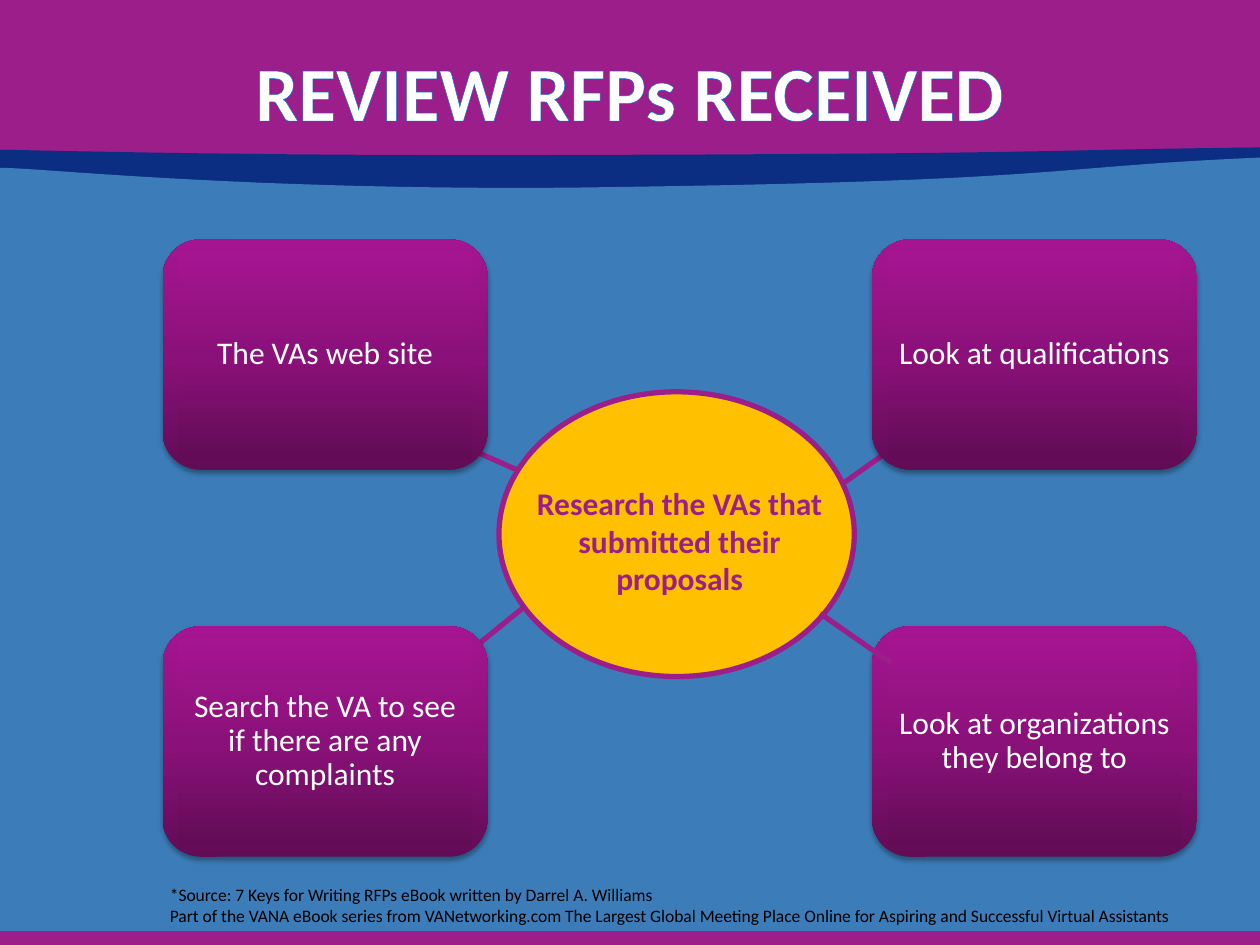
import pptx
import pptx.util
import pptx.dml.color
import pptx.enum.shapes
import pptx.enum.text
import pptx.oxml
import pptx.oxml.ns
from lxml import etree

Inches = pptx.util.Inches
Pt = pptx.util.Pt
Kind = pptx.enum.shapes.MSO_SHAPE
Align = pptx.enum.text.PP_ALIGN
Anchor = pptx.enum.text.MSO_ANCHOR
qn = pptx.oxml.ns.qn

HUES = {
    "plum": "9C1E8A", "navy": "0B2E82", "sky": "3C7DB9", "gold": "FFC000",
    "white": "FFFFFF", "black": "000000", "edge": "0070D5",
    "deep": "620C56", "mid": "8B117A", "light": "A51591",
}
FADE = [(0, "deep"), (50, "mid"), (100, "light")]
FACE = "Calibri"


def color(name):
    return pptx.dml.color.RGBColor.from_string(HUES[name])


def assign(item, values):
    for key, value in values.items():
        setattr(item, key, value)


def node(parent, tag, **attrs):
    return etree.SubElement(parent, qn(tag), {k: str(v) for k, v in attrs.items()})


def paint(shape, fill, line=None):
    shape.shadow.inherit = False
    shape.fill.solid()
    shape.fill.fore_color.rgb = color(fill)
    if line:
        shape.line.color.rgb = color(line)
        shape.line.width = Pt(3)
    else:
        shape.line.fill.background()


def add_form(shapes, kind, box, fill, line=None):
    shape = shapes.add_shape(kind, *map(Inches, box))
    paint(shape, fill, line)
    return shape


def curve(start, first, second, end, steps=24):
    for n in range(1, steps + 1):
        t = n / steps
        u = 1 - t
        parts = zip(start, first, second, end)
        yield tuple(Inches(u**3 * a + 3 * u * u * t * b + 3 * u * t * t * c + t**3 * d)
                    for a, b, c, d in parts)


def add_wave(shapes, points, base, fill):
    start, end = points[0], points[-1]
    edge = [*curve(*points[:4]), *curve(*points[3:])]
    rim = [(Inches(end[0]), Inches(base)), (Inches(start[0]), Inches(base))]
    build = shapes.build_freeform(Inches(start[0]), Inches(start[1]))
    build.add_line_segments(edge + rim, close=True)
    paint(build.convert_to_shape(), fill)


def add_link(shapes, start, end):
    link = shapes.add_connector(pptx.enum.shapes.MSO_CONNECTOR.STRAIGHT,
                                *map(Inches, start + end))
    link.line.color.rgb = color("plum")
    link.line.width = Pt(3)
    node(link._element.spPr, "a:effectLst")


def shade(shape):
    shape.fill.gradient()
    shape.fill.gradient_angle = 90
    stops = shape._element.spPr.find(".//" + qn("a:gsLst"))
    for stop in list(stops):
        stops.remove(stop)
    for place, name in FADE:
        node(node(stops, "a:gs", pos=place * 1000), "a:srgbClr", val=HUES[name])


def drop(shape):
    effect = shape._element.spPr.find(qn("a:effectLst"))
    cast = node(effect, "a:outerShdw", blurRad=Pt(3.1), dist=Pt(1.8),
                dir=90 * 60000, rotWithShape=0)
    node(node(cast, "a:srgbClr", val=HUES["black"]), "a:alpha", val=35000)


def write(frame, lines, size, hue, bold=False, para=None):
    frame.word_wrap = True
    for n, line in enumerate(lines):
        part = frame.paragraphs[0] if n == 0 else frame.add_paragraph()
        assign(part, para or {})
        run = part.add_run()
        run.text = line
        assign(run.font, {"name": FACE, "size": Pt(size), "bold": bold})
        run.font.color.rgb = color(hue)


def add_label(shapes, box, lines, size, hue, bold=False, para=None):
    label = shapes.add_textbox(*map(Inches, box))
    write(label.text_frame, lines, size, hue, bold, para)
    return label


def add_card(shapes, left, top, text):
    group = shapes.add_group_shape().shapes
    card = add_form(group, Kind.ROUNDED_RECTANGLE, (left, top, 2.58, 1.83), "mid")
    inner = add_form(group, Kind.RECTANGLE, (left + 0.125, top + 0.09, 2.33, 1.65), "mid")
    for shape in (card, inner):
        shade(shape)
    drop(card)
    sides = ("margin_left", "margin_right", "margin_top", "margin_bottom")
    assign(inner.text_frame, dict.fromkeys(sides, Inches(0.05)))
    inner.text_frame.vertical_anchor = Anchor.MIDDLE
    write(inner.text_frame, [text], 18, "white",
          para={"alignment": Align.CENTER, "line_spacing": 0.9})


def add_title(shapes, text):
    title = add_label(shapes, (0.5, 0.3, 9, 1.25), [text], 44, "white", True,
                      {"alignment": Align.CENTER})
    props = title.text_frame.paragraphs[0].runs[0].font._element
    line = etree.Element(qn("a:ln"), {"w": str(Pt(1))})
    node(node(line, "a:solidFill"), "a:srgbClr", val=HUES["edge"])
    props.insert(0, line)


def add_back(shapes):
    add_form(shapes, Kind.RECTANGLE, (-0.03, 0, 10.04, 1.75), "plum")
    add_wave(shapes, [(-0.03, 1.19), (-0.03, 1.18), (1.61, 1.24), (4.48, 1.23),
                      (8.52, 1.22), (8.16, 1.19), (10, 1.17)], 2.92, "navy")
    add_wave(shapes, [(-0.03, 1.34), (-0.03, 1.29), (1.61, 1.51), (4.49, 1.49),
                      (8.53, 1.44), (8.17, 1.33), (10.01, 1.25)], 7.5, "sky")
    add_form(shapes, Kind.RECTANGLE, (-0.03, 7.39, 10.04, 0.17), "plum")


def main():
    deck = pptx.Presentation()
    assign(deck, {"slide_width": Inches(10), "slide_height": Inches(7.5)})
    shapes = deck.slides.add_slide(deck.slide_layouts[6]).shapes
    add_back(shapes)

    for start, end in [((6.63, 3.88), (7.05, 3.58)),
                       ((3.53, 5.33), (4.23, 4.76)),
                       ((3.63, 3.52), (4.24, 3.79))]:
        add_link(shapes, start, end)

    cards = [("The VAs web site", "Search the VA to see if there are any complaints"),
             ("Look at qualifications", "Look at organizations they belong to")]
    for left, texts in zip((1.29, 6.92), cards):
        for top, text in zip((1.9, 4.97), texts):
            add_card(shapes, left, top, text)

    add_title(shapes, "REVIEW RFPs RECEIVED")
    add_form(shapes, Kind.OVAL, (3.96, 3.11, 2.82, 2.26), "gold", "plum")
    add_label(shapes, (4.06, 3.79, 2.67, 1.31),
              ["Research the VAs that submitted their proposals"],
              18, "plum", True, {"alignment": Align.CENTER})
    add_link(shapes, (6.51, 4.87), (7.07, 5.26))
    add_label(shapes, (1.25, 6.97, 8.75, 0.44), [
        "*Source: 7 Keys for Writing RFPs eBook written by Darrel A. Williams",
        "Part of the VANA eBook series from VANetworking.com The Largest Global "
        "Meeting Place Online for Aspiring and Successful Virtual Assistants",
    ], 10, "black")
    deck.save("out.pptx")


if __name__ == "__main__":
    main()
